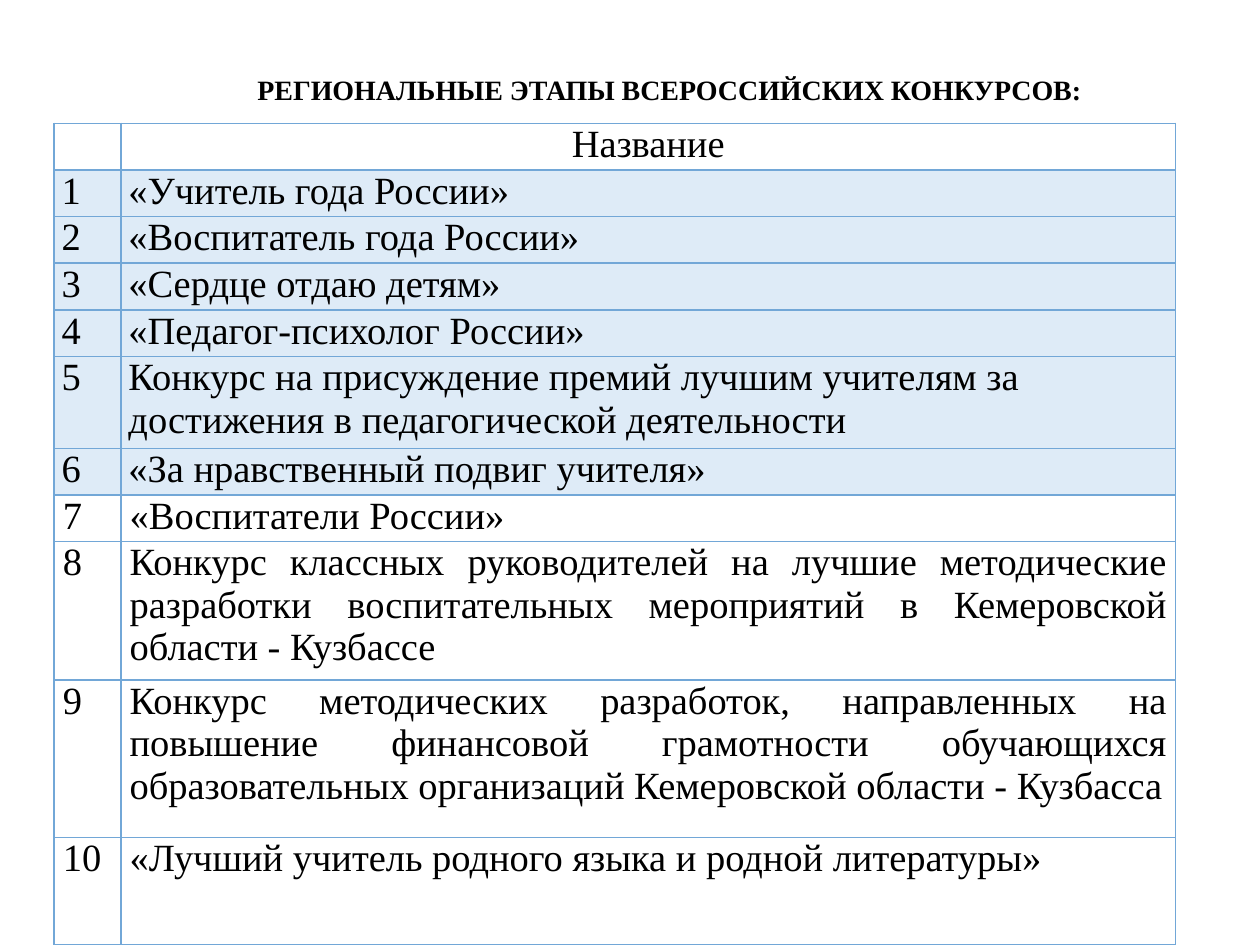
from lxml import etree
from pptx import Presentation
from pptx import util as u
from pptx.dml.color import RGBColor
from pptx.enum import text
from pptx.oxml.ns import qn

FONT = "Times New Roman"
BLACK, PALE_BLUE, BORDER = "000000", "DEEBF7", "72A7D7"
LEFT, CENTER, JUSTIFY = (text.PP_ALIGN.LEFT, text.PP_ALIGN.CENTER,
                         text.PP_ALIGN.JUSTIFY)
LINE = 0.37  # height of a one-line row

# Contest name and row height; rows are numbered in this order
CONTESTS = [
    ("«Учитель года России»", LINE),
    ("«Воспитатель года России»", LINE),
    ("«Сердце отдаю детям»", LINE),
    ("«Педагог-психолог России»", LINE),
    ("Конкурс на присуждение премий лучшим учителям за достижения "
     "в педагогической деятельности", 0.73),
    ("«За нравственный подвиг учителя»", LINE),
    ("«Воспитатели России»", LINE),
    ("Конкурс классных руководителей на лучшие методические разработки "
     "воспитательных мероприятий в Кемеровской области - Кузбассе", 1.1),
    ("Конкурс методических разработок, направленных на повышение финансовой "
     "грамотности обучающихся образовательных организаций "
     "Кемеровской области - Кузбасса", 1.25),
    ("«Лучший учитель родного языка и родной литературы»", 0.85),
]
LAST_SHADED = 6
FIRST_JUSTIFIED = 8


def color(value):
    return RGBColor.from_string(value)


def style_paragraph(para, size, align, bold=False):
    para.alignment = align
    para.font.name = FONT
    para.font.size = u.Pt(size)
    para.font.bold = bold
    para.font.color.rgb = color(BLACK)


def add_title(slide, wording):
    title = slide.shapes.title
    title.left, title.top = u.Inches(1.14), u.Inches(0.52)
    title.width, title.height = u.Inches(8.35), u.Inches(0.37)
    frame = title.text_frame
    frame.text = wording
    frame.word_wrap = True
    frame.auto_size = text.MSO_AUTO_SIZE.NONE
    frame.vertical_anchor = text.MSO_ANCHOR.MIDDLE
    style_paragraph(frame.paragraphs[0], 16, CENTER, bold=True)


def set_borders(cell):
    properties = cell._tc.get_or_add_tcPr()
    # Border lines must come before the fill
    for index, side in enumerate(("a:lnL", "a:lnR", "a:lnT", "a:lnB")):
        line = etree.Element(qn(side), w=str(u.Pt(1)))
        fill = etree.SubElement(line, qn("a:solidFill"))
        etree.SubElement(fill, qn("a:srgbClr"), val=BORDER)
        properties.insert(index, line)


def fill_cell(cell, wording, align, inset, shaded):
    cell.text = wording
    cell.margin_left = cell.margin_right = u.Inches(inset)
    cell.margin_top = cell.margin_bottom = 0
    cell.vertical_anchor = text.MSO_ANCHOR.TOP
    style_paragraph(cell.text_frame.paragraphs[0], 22, align)
    if shaded:
        cell.fill.solid()
        cell.fill.fore_color.rgb = color(PALE_BLUE)
    else:
        cell.fill.background()
    set_borders(cell)


def add_contest_table(slide):
    heights = [LINE] + [height for _, height in CONTESTS]
    table = slide.shapes.add_table(
        len(heights), 2, u.Inches(0.43), u.Inches(0.98),
        u.Inches(8.9), u.Inches(sum(heights))).table
    table.first_row = table.horz_banding = False
    for column, width in zip(table.columns, (0.53, 8.37)):
        column.width = u.Inches(width)
    for row, height in zip(table.rows, heights):
        row.height = u.Inches(height)

    # Header row
    for column, wording in enumerate(("", "Название")):
        fill_cell(table.cell(0, column), wording, CENTER, 0.06, False)

    # Numbered contests
    for number, (name, _) in enumerate(CONTESTS, start=1):
        shaded = number <= LAST_SHADED
        inset = 0.06 if shaded else 0.07
        align = JUSTIFY if number >= FIRST_JUSTIFIED else LEFT
        for column, wording in enumerate((str(number), name)):
            fill_cell(table.cell(number, column), wording, align, inset, shaded)


def main():
    deck = Presentation()
    deck.slide_width, deck.slide_height = u.Inches(10), u.Inches(7.5)
    slide = deck.slides.add_slide(deck.slide_layouts.get_by_name("Title Only"))
    add_title(slide, "РЕГИОНАЛЬНЫЕ ЭТАПЫ ВСЕРОССИЙСКИХ КОНКУРСОВ:")
    add_contest_table(slide)
    deck.save("out.pptx")


if __name__ == "__main__":
    main()
